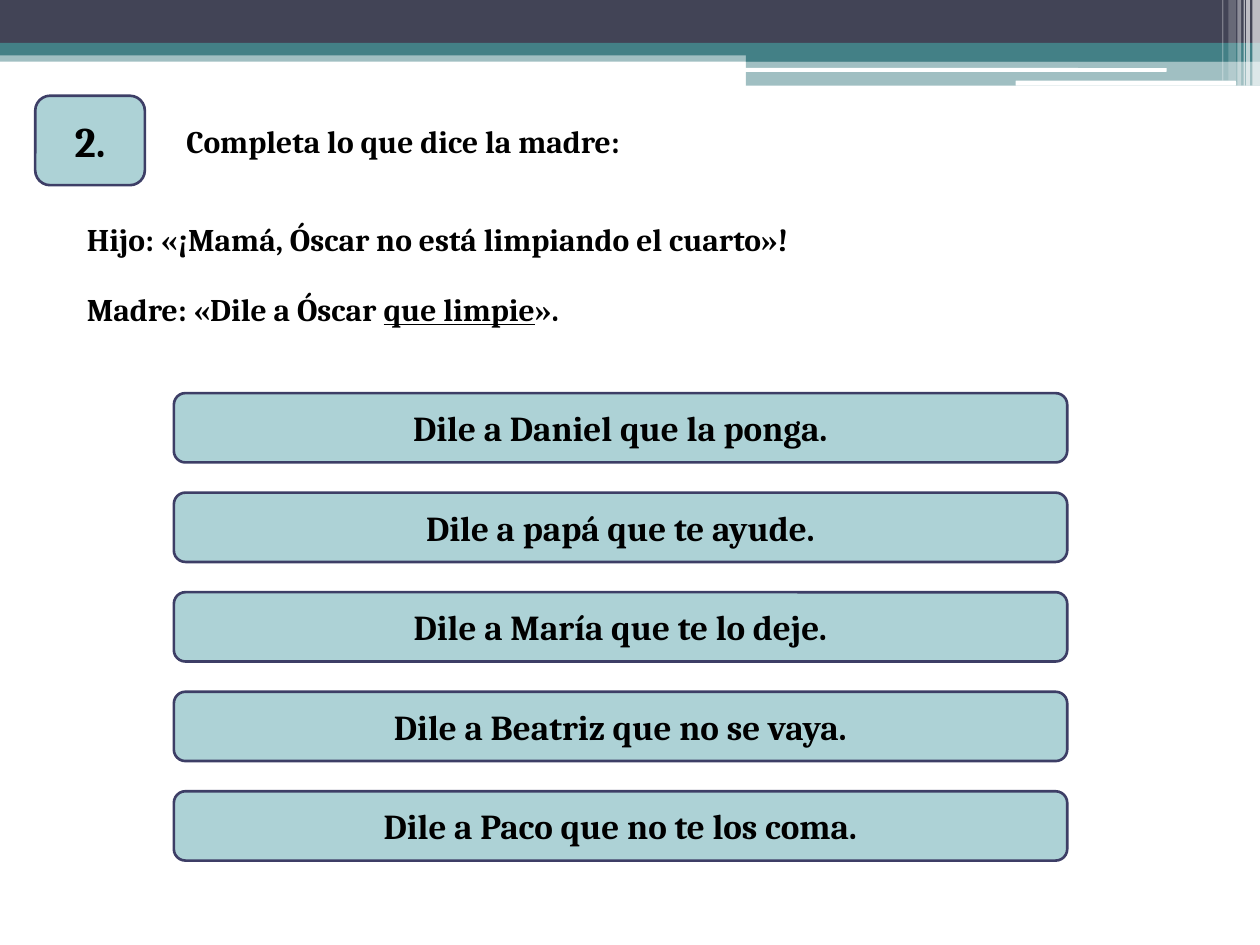
"""Build a Spanish grammar exercise slide with a banner and five answer boxes."""
from dataclasses import dataclass

from lxml import etree
from pptx import Presentation
from pptx import util as u
from pptx.dml.color import RGBColor
from pptx.enum import shapes, text
from pptx.oxml import ns


@dataclass(frozen=True)
class Theme:
    """Colours, font and type sizes of the slide."""
    dark: str = "424456"
    teal: str = "438086"
    white: str = "FFFFFF"
    ink: str = "000000"
    box: str = "ADD2D6"
    outline: str = "3D3E66"
    font: str = "Cambria"
    number_size: int = 24
    answer_size: int = 20
    body_size: int = 18


THEME = Theme()
RECTANGLE = shapes.MSO_SHAPE.RECTANGLE
ROUNDED = shapes.MSO_SHAPE.ROUNDED_RECTANGLE

BANDS = [
    (0, 0.4, 10, 0.09, RECTANGLE, THEME.teal, 50),
    (0, 0, 10, 0.34, RECTANGLE, THEME.dark, 100),
    (0, 0.34, 10, 0.1, RECTANGLE, THEME.teal, 100),
    (5.92, 0.39, 4.08, 0.1, RECTANGLE, THEME.teal, 100),
    (5.92, 0.48, 4.08, 0.2, RECTANGLE, THEME.teal, 50),
    (5.91, 0.54, 3.35, 0.03, ROUNDED, THEME.white, 100),
    (8.06, 0.64, 1.75, 0.04, ROUNDED, THEME.white, 100),
]
STRIPES = [
    (9.94, 0.06, 0.68, 65),
    (9.89, 0.03, 0.68, 65),
    (9.87, 0.01, 0.68, 60),
    (9.82, 0.03, 0.68, 40),
    (9.75, 0.06, 0.64, 20),
    (9.7, 0.01, 0.64, 30),
]
ANSWERS = [
    "Dile a Daniel que la ponga.",
    "Dile a papá que te ayude.",
    "Dile a María que te lo deje.",
    "Dile a Beatriz que no se vaya.",
    "Dile a Paco que no te los coma.",
]
ANSWER_TOP, ANSWER_STEP = 3.12, 0.79


def write_text(shape, *parts, size=THEME.body_size, align=text.PP_ALIGN.LEFT,
               anchor=text.MSO_ANCHOR.TOP, wrap=True, underlined=None):
    """Write the parts as runs of one paragraph, underlining the chosen part."""
    frame = shape.text_frame
    frame.auto_size = text.MSO_AUTO_SIZE.NONE
    frame.word_wrap = wrap
    frame.vertical_anchor = anchor
    paragraph = frame.paragraphs[0]
    paragraph.alignment = align
    for part in parts:
        run = paragraph.add_run()
        run.text = part
        run.font.name = THEME.font
        run.font.size = u.Pt(size)
        run.font.bold = True
        run.font.underline = part == underlined
        run.font.color.rgb = RGBColor.from_string(THEME.ink)


def add_block(slide, left, top, width, height, kind, color, opacity=100):
    """Add a filled shape without a line or shadow."""
    shape = slide.shapes.add_shape(kind, u.Inches(left), u.Inches(top),
                                   u.Inches(width), u.Inches(height))
    shape.shadow.inherit = False
    shape.fill.solid()
    shape.fill.fore_color.rgb = RGBColor.from_string(color)
    shape.line.fill.background()
    if opacity < 100:
        fill_color = shape.fill._xPr.find(".//" + ns.qn("a:srgbClr"))
        etree.SubElement(fill_color, ns.qn("a:alpha"), val=str(opacity * 1000))
    return shape


def add_box(slide, left, top, width, height, label, size):
    """Add an outlined rounded box with a centred label."""
    shape = add_block(slide, left, top, width, height, ROUNDED, THEME.box)
    shape.line.color.rgb = RGBColor.from_string(THEME.outline)
    shape.line.width = u.Pt(1.5)
    write_text(shape, label, size=size, align=text.PP_ALIGN.CENTER,
               anchor=text.MSO_ANCHOR.MIDDLE)


def add_banner(slide):
    """Add the bands across the top and the pale stripes at their right end."""
    for band in BANDS:
        add_block(slide, *band)
    for left, width, height, opacity in STRIPES:
        add_block(slide, left, 0, width, height, RECTANGLE, THEME.white, opacity)


def set_title(slide, title):
    """Place and fill the title placeholder."""
    shape = slide.shapes.title
    shape.left, shape.top = u.Inches(1.38), u.Inches(0.92)
    shape.width, shape.height = u.Inches(4.21), u.Inches(0.4)
    write_text(shape, title, wrap=False)


def add_line_of_dialogue(slide, top, *parts, underlined=None):
    """Add one spoken line as a text box."""
    shape = slide.shapes.add_textbox(u.Inches(0.59), u.Inches(top),
                                     u.Inches(6.91), u.Inches(0.4))
    write_text(shape, *parts, underlined=underlined)


def main():
    """Build and save the slide."""
    presentation = Presentation()
    presentation.slide_width = u.Inches(10)
    presentation.slide_height = u.Inches(7.5)
    slide = presentation.slides.add_slide(
        presentation.slide_layouts.get_by_name("Title Only"))
    add_banner(slide)
    add_box(slide, 0.28, 0.76, 0.87, 0.71, "2.", THEME.number_size)
    set_title(slide, "Completa lo que dice la madre:")
    add_line_of_dialogue(slide, 1.7, "Hijo: «¡Mamá, Óscar no está limpiando el cuarto»!")
    add_line_of_dialogue(slide, 2.25, "Madre: «Dile a Óscar ", "que limpie", "».",
                         underlined="que limpie")
    for index, answer in enumerate(ANSWERS):
        add_box(slide, 1.38, ANSWER_TOP + index * ANSWER_STEP, 7.09, 0.55,
                answer, THEME.answer_size)
    presentation.save("out.pptx")


if __name__ == "__main__":
    main()
